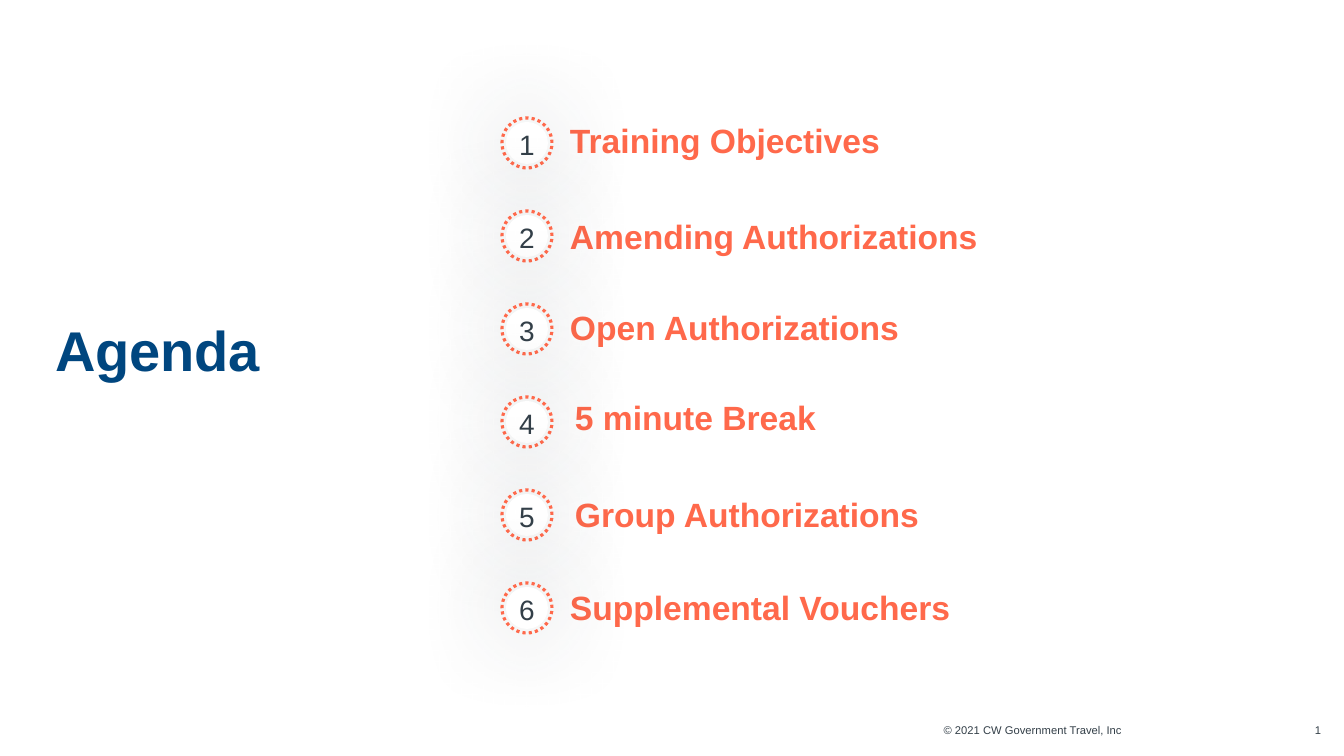
import pptx
import pptx.dml.color
import pptx.enum.dml
import pptx.enum.shapes
import pptx.enum.text
import pptx.util
from lxml import etree
from pptx.oxml.ns import qn

EMU_PER_PX = 914400 / 100.8
FONT = "Arial"
CORAL, NAVY, SLATE, WHITE = "FF694B", "00467F", "333F48", "FFFFFF"
FIRST_CENTER, ROW_PITCH = 143, 93
BADGE_CENTER, DISC_SIZE, RING_SIZE = 527, 42, 50
AGENDA_ITEMS = [
    ("Training Objectives", 570, 132, 445, 27, 0.65),
    ("Amending Authorizations", 570, 216, 634, 40, None),
    ("Open Authorizations", 570, 320, 651, 26, 0.65),
    ("5 minute Break", 575, 409, 769, 27, 0.65),
    ("Group Authorizations", 575, 507, 705, 26, 0.65),
    ("Supplemental Vouchers", 570, 587, 710, 40, None),
]


def px(length):
    """Turn a length in px into EMU."""
    return pptx.util.Emu(round(length * EMU_PER_PX))


def color(value):
    """Turn a hex string into a colour."""
    return pptx.dml.color.RGBColor.from_string(value)


def add_text(shapes, text, box, size, fill, bold=False, align="LEFT",
             anchor="TOP", spacing=None, wrap=True):
    """Add a text box without insets holding one styled paragraph."""
    shape = shapes.add_textbox(*map(px, box))
    frame = shape.text_frame
    frame.text = text
    frame.word_wrap = wrap
    frame.margin_left = frame.margin_right = 0
    frame.margin_top = frame.margin_bottom = 0
    frame.vertical_anchor = pptx.enum.text.MSO_ANCHOR[anchor]
    paragraph = frame.paragraphs[0]
    paragraph.alignment = pptx.enum.text.PP_ALIGN[align]
    if spacing:
        paragraph.line_spacing = spacing
    font = paragraph.runs[0].font
    font.name = FONT
    font.size = pptx.util.Pt(size)
    font.bold = bold
    font.color.rgb = color(fill)
    return shape


def add_circle(shapes, center_x, center_y, diameter):
    """Add a plain circle around a centre point."""
    left, top = center_x - diameter // 2, center_y - diameter // 2
    shape = shapes.add_shape(pptx.enum.shapes.MSO_SHAPE.OVAL,
                             px(left), px(top), px(diameter), px(diameter))
    shape.shadow.inherit = False
    return shape


def add_glow_shadow(shape, fill, blur, opacity):
    """Give a shape a soft shadow centred behind it."""
    effects = shape._element.spPr.find(qn("a:effectLst"))
    shadow = etree.SubElement(effects, qn("a:outerShdw"), algn="ctr", rotWithShape="0",
                              blurRad=str(pptx.util.Pt(blur)), dist="0", dir="0")
    tint = etree.SubElement(shadow, qn("a:srgbClr"), val=fill)
    etree.SubElement(tint, qn("a:alpha"), val=str(opacity * 1000))


def add_badge(slide, number, center_x, center_y):
    """Add a numbered disc inside a dotted ring as one group."""
    shapes = slide.shapes.add_group_shape().shapes
    disc = add_circle(shapes, center_x, center_y, DISC_SIZE)
    disc.fill.solid()
    disc.fill.fore_color.rgb = color(WHITE)
    disc.line.fill.background()
    add_glow_shadow(disc, SLATE, 70, 40)
    ring = add_circle(shapes, center_x, center_y, RING_SIZE)
    ring.fill.background()
    ring.line.color.rgb = color(CORAL)
    ring.line.width = pptx.util.Pt(2.25)
    ring.line.dash_style = pptx.enum.dml.MSO_LINE.ROUND_DOT
    add_text(shapes, str(number), (center_x - 18, center_y - 21, 36, 44), 20, SLATE,
             align="CENTER", anchor="MIDDLE", wrap=False)


def main():
    """Build the agenda slide."""
    presentation = pptx.Presentation()
    presentation.slide_width, presentation.slide_height = px(1344), px(756)
    slide = presentation.slides.add_slide(presentation.slide_layouts[6])
    add_text(slide.shapes, "© 2021 CW Government Travel, Inc", (845, 723, 277, 14), 8,
             SLATE, align="RIGHT")
    add_text(slide.shapes, "1", (1298, 723, 23, 14), 8, SLATE, align="RIGHT")
    for label, left, top, width, height, spacing in AGENDA_ITEMS:
        add_text(slide.shapes, label, (left, top, width, height), 24, CORAL, bold=True,
                 anchor="MIDDLE", spacing=spacing)
    for row in range(len(AGENDA_ITEMS)):
        add_badge(slide, row + 1, BADGE_CENTER, FIRST_CENTER + row * ROW_PITCH)
    add_text(slide.shapes, "Agenda", (55, 72, 353, 554), 40, NAVY, bold=True,
             anchor="MIDDLE")
    presentation.save("out.pptx")


if __name__ == "__main__":
    main()
